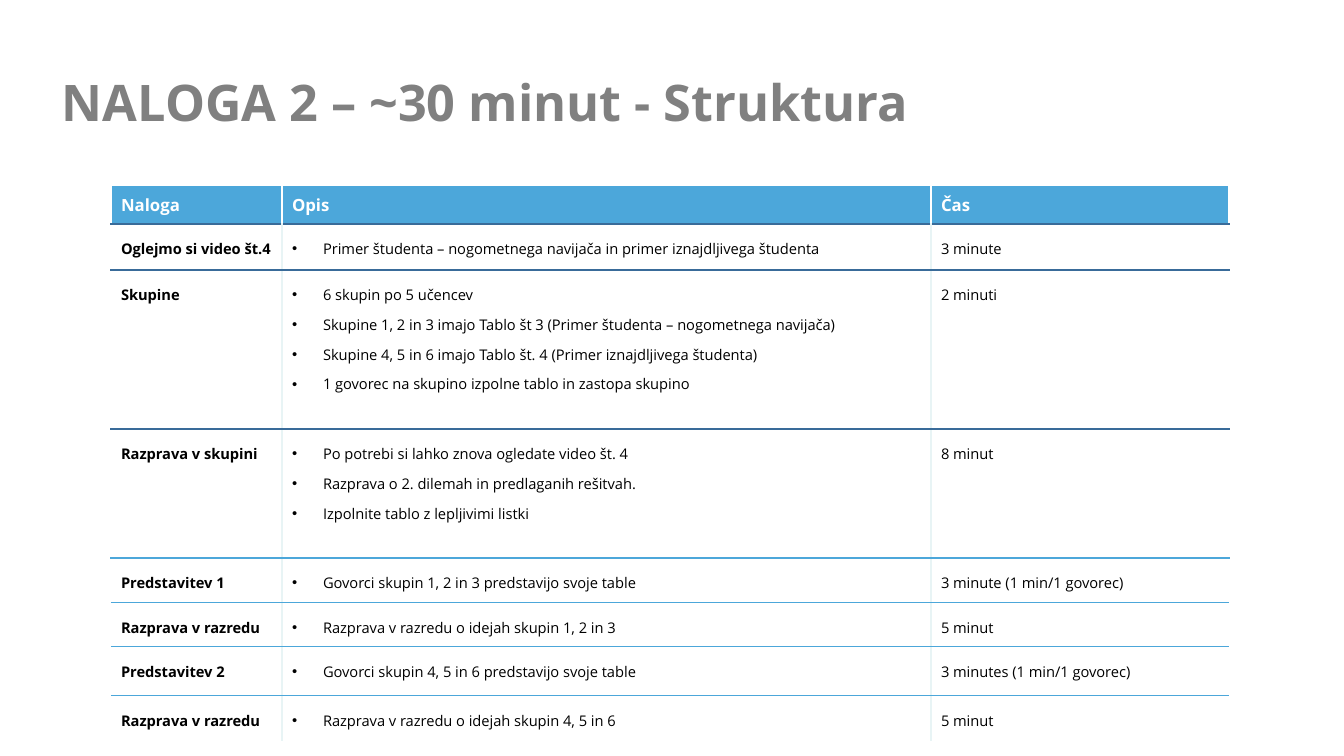
"""Build the task structure slide with its timetable."""
from lxml.etree import SubElement
from pptx import Presentation
from pptx.dml.color import RGBColor
from pptx.enum.text import MSO_ANCHOR, MSO_AUTO_SIZE, PP_ALIGN
from pptx.oxml import parse_xml
from pptx.oxml.ns import nsdecls, qn
from pptx.util import Pt

PX = 914400 / 100.8
FONT = "Open Sans"
WHITE = RGBColor(0xFF, 0xFF, 0xFF)
BLACK = RGBColor(0x00, 0x00, 0x00)
GREY = RGBColor(0x80, 0x80, 0x80)
SKY = RGBColor(0x4C, 0xA7, 0xDA)
NAVY = RGBColor(0x39, 0x6B, 0x99)
PALE = RGBColor(0xE8, 0xF4, 0xF5)

COLUMN_WIDTHS = [171, 649, 298]
HEADER = ["Naloga", "Opis", "Čas"]
HEADER_HEIGHT = 39
TASKS = [
    (46, "Oglejmo si video št.4",
     ["Primer študenta – nogometnega navijača in primer iznajdljivega študenta"],
     "3 minute"),
    (159, "Skupine",
     ["6 skupin po 5 učencev",
      "Skupine 1, 2 in 3 imajo Tablo št 3 (Primer študenta – nogometnega navijača)",
      "Skupine 4, 5 in 6 imajo Tablo št. 4 (Primer iznajdljivega študenta)",
      "1 govorec na skupino izpolne tablo in zastopa skupino"],
     "2 minuti"),
    (129, "Razprava v skupini",
     ["Po potrebi si lahko znova ogledate video št. 4",
      "Razprava o 2. dilemah in predlaganih rešitvah.",
      "Izpolnite tablo z lepljivimi listki"],
     "8 minut"),
    (45, "Predstavitev 1",
     ["Govorci skupin 1, 2 in 3 predstavijo svoje table"],
     "3 minute (1 min/1 govorec)"),
    (44, "Razprava v razredu",
     ["Razprava v razredu o idejah skupin 1, 2 in 3"],
     "5 minut"),
    (49, "Predstavitev 2",
     ["Govorci skupin 4, 5 in 6 predstavijo svoje table"],
     "3 minutes (1 min/1 govorec)"),
    (45, "Razprava v razredu",
     ["Razprava v razredu o idejah skupin 4, 5 in 6"],
     "5 minut"),
]
NAVY_RULES = 3


def px(length):
    """Turn pixels into EMU."""
    return round(length * PX)


def format_spans(para, size, color, bold):
    """Format every run of a paragraph."""
    for span in para.runs:
        span.font.name = FONT
        span.font.size = Pt(size)
        span.font.bold = bold
        span.font.color.rgb = color


def add_bullet(para):
    """Give a paragraph a round bullet and a hanging indent."""
    properties = para._p.get_or_add_pPr()
    properties.set("marL", str(px(31)))
    properties.set("indent", str(px(-31)))
    SubElement(properties, qn("a:buFont")).set("typeface", "Arial")
    SubElement(properties, qn("a:buChar")).set("char", "•")


def set_borders(cell, left, right, top, bottom):
    """Draw the four cell edges; None leaves an edge without a line."""
    properties = cell._tc.get_or_add_tcPr()
    edges = zip("LRTB", (left, right, top, bottom))
    for index, (side, color) in enumerate(edges):
        paint = (f'<a:solidFill><a:srgbClr val="{color}"/></a:solidFill>'
                 if color else "<a:noFill/>")
        properties.insert(index, parse_xml(
            f'<a:ln{side} {nsdecls("a")} w="12700">{paint}</a:ln{side}>'))


def add_title(slide, text):
    """Place and format the slide title."""
    title = slide.shapes.title
    title.left, title.top, title.width, title.height = map(px, (57, 69, 1229, 116))
    frame = title.text_frame
    frame.text = text
    frame.word_wrap = True
    frame.auto_size = MSO_AUTO_SIZE.NONE
    frame.vertical_anchor = MSO_ANCHOR.TOP
    frame.margin_left = frame.margin_right = px(5)
    frame.margin_top = frame.margin_bottom = px(2)
    frame.paragraphs[0].alignment = PP_ALIGN.LEFT
    format_spans(frame.paragraphs[0], 36, GREY, True)


def fill_header(cell, text):
    """Fill one header cell."""
    cell.text_frame.text = text
    cell.vertical_anchor = MSO_ANCHOR.MIDDLE
    format_spans(cell.text_frame.paragraphs[0], 12, WHITE, True)
    cell.fill.solid()
    cell.fill.fore_color.rgb = SKY
    set_borders(cell, WHITE, WHITE, WHITE, NAVY)


def fill_body(cell, lines, bold=False, bulleted=False):
    """Fill one body cell with a paragraph per line."""
    cell.text_frame.text = "\n".join(lines)
    cell.vertical_anchor = MSO_ANCHOR.TOP
    cell.fill.background()
    for para in cell.text_frame.paragraphs:
        if bulleted:
            add_bullet(para)
        para.line_spacing = 1.5
        format_spans(para, 10.5, BLACK, bold)


def add_timetable(slide):
    """Add the table of tasks, descriptions and times."""
    heights = [HEADER_HEIGHT] + [task[0] for task in TASKS]
    frame = slide.shapes.add_table(
        len(heights), len(COLUMN_WIDTHS), px(111), px(185),
        px(sum(COLUMN_WIDTHS)), px(sum(heights)))
    table = frame.table
    table.first_row = table.horz_banding = False
    for column, width in zip(table.columns, COLUMN_WIDTHS):
        column.width = px(width)
    for row, height in zip(table.rows, heights):
        row.height = px(height)
    for column, text in enumerate(HEADER):
        fill_header(table.cell(0, column), text)
    for number, (_, name, steps, time) in enumerate(TASKS, 1):
        cells = table.rows[number].cells
        fill_body(cells[0], [name], bold=True)
        fill_body(cells[1], steps, bulleted=True)
        fill_body(cells[2], [time])
        top = NAVY if number <= NAVY_RULES else SKY
        bottom = NAVY if number < NAVY_RULES else SKY
        if number == len(TASKS):
            bottom = None
        outer = WHITE if number <= NAVY_RULES else None
        sides = [outer, PALE, PALE, outer]
        for column, cell in enumerate(cells):
            set_borders(cell, sides[column], sides[column + 1], top, bottom)


def main():
    """Build and save the deck."""
    deck = Presentation()
    deck.slide_width, deck.slide_height = px(1344), px(756)
    slide = deck.slides.add_slide(deck.slide_layouts[5])
    add_title(slide, "NALOGA 2 – ~30 minut - Struktura")
    add_timetable(slide)
    deck.save("out.pptx")


if __name__ == "__main__":
    main()
